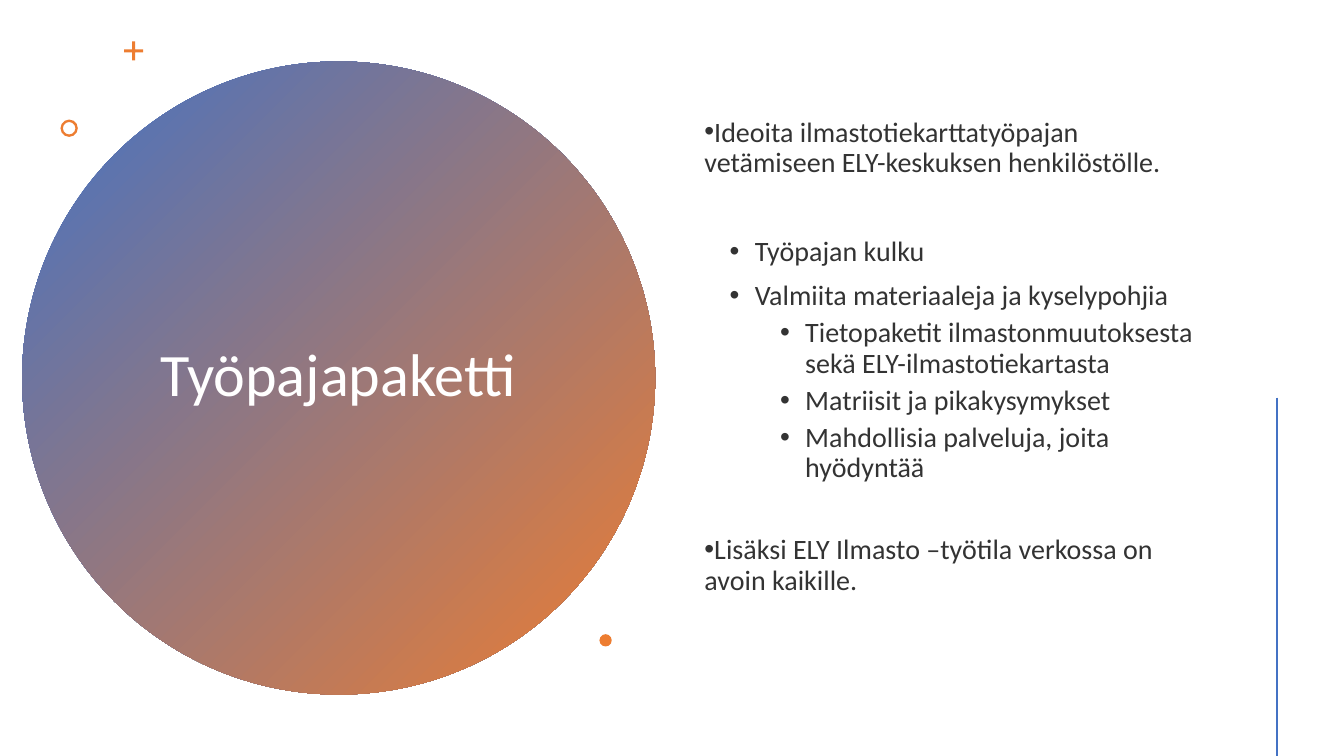
from dataclasses import dataclass

from lxml.etree import SubElement
from pptx import Presentation
from pptx.dml.color import RGBColor
from pptx.enum.shapes import MSO_CONNECTOR, MSO_SHAPE
from pptx.enum.text import MSO_ANCHOR, PP_ALIGN
from pptx.oxml.ns import qn
from pptx.util import Pt

COLORS = {"blue": "4472C4", "orange": "ED7D31", "white": "FFFFFF", "text": "333333"}
FONT = "Calibri"
HANGING = -18


@dataclass
class Accent:
    kind: MSO_SHAPE
    left: float
    top: float
    size: float
    adjustment: float | None = None


@dataclass
class Bullet:
    text: str
    margin: float
    space_before: float
    level: int = 0


ACCENTS = [
    Accent(MSO_SHAPE.CROSS, 88.6, 29.5, 13.7, 0.42),
    Accent(MSO_SHAPE.DONUT, 43.2, 85.4, 12.4, 0.14),
    Accent(MSO_SHAPE.OVAL, 428.2, 453, 8.8),
]

BULLETS = [
    Bullet("Ideoita ilmastotiekarttatyöpajan vetämiseen ELY-keskuksen henkilöstölle.", 0, 10),
    Bullet("Työpajan kulku", 36, 42),
    Bullet("Valmiita materiaaleja ja kyselypohjia", 36, 10),
    Bullet("Tietopaketit ilmastonmuutoksesta sekä ELY-ilmastotiekartasta", 72, 5, 1),
    Bullet("Matriisit ja pikakysymykset", 72, 5, 1),
    Bullet("Mahdollisia palveluja, joita hyödyntää", 72, 5, 1),
    Bullet("Lisäksi ELY Ilmasto –työtila verkossa on avoin kaikille.", 0, 37),
]


def color(name: str) -> RGBColor:
    return RGBColor.from_string(COLORS[name])


def apply_format(target, values: dict) -> None:
    for name, value in values.items():
        setattr(target, name, value)


def add_plain_shape(slide, kind: MSO_SHAPE, left: float, top: float, size: float):
    shape = slide.shapes.add_shape(kind, Pt(left), Pt(top), Pt(size), Pt(size))
    shape.shadow.inherit = False
    shape.line.fill.background()
    return shape


def add_circle(slide) -> None:
    circle = add_plain_shape(slide, MSO_SHAPE.OVAL, 15.8, 43.9, 452.2)
    circle.fill.gradient()
    circle.fill.gradient_angle = 315
    for stop, position, name in zip(circle.fill.gradient_stops, (0, 1), ("blue", "orange")):
        stop.position = position
        stop.color.rgb = color(name)


def add_accent(slide, accent: Accent) -> None:
    shape = add_plain_shape(slide, accent.kind, accent.left, accent.top, accent.size)
    shape.fill.solid()
    shape.fill.fore_color.rgb = color("orange")
    if accent.adjustment is not None:
        shape.adjustments[0] = accent.adjustment


def add_text_frame(slide, left: float, top: float, width: float, height: float):
    box = slide.shapes.add_textbox(Pt(left), Pt(top), Pt(width), Pt(height))
    apply_format(box.text_frame, {"word_wrap": True, "vertical_anchor": MSO_ANCHOR.MIDDLE})
    return box.text_frame


def write_text(paragraph, text: str, size: float, color_name: str, layout: dict) -> None:
    run = paragraph.add_run()
    run.text = text
    apply_format(run.font, {"name": FONT, "size": Pt(size)})
    run.font.color.rgb = color(color_name)
    apply_format(paragraph, {"line_spacing": 0.9, **layout})


def add_bullet(paragraph, bullet: Bullet) -> None:
    layout = {"level": bullet.level, "space_before": Pt(bullet.space_before)}
    write_text(paragraph, bullet.text, 20, "text", layout)
    properties = paragraph._p.get_or_add_pPr()
    properties.set("marL", str(Pt(bullet.margin)))
    properties.set("indent", str(Pt(HANGING)))
    SubElement(properties, qn("a:buFont")).set("typeface", "Arial")
    SubElement(properties, qn("a:buChar")).set("char", "•")


def add_side_line(slide) -> None:
    line = slide.shapes.add_connector(
        MSO_CONNECTOR.STRAIGHT, Pt(912.2), Pt(284), Pt(912.2), Pt(540)
    )
    line.line.color.rgb = color("blue")
    line.line.width = Pt(2)
    SubElement(line._element.spPr, qn("a:effectLst"))


def main() -> None:
    presentation = Presentation()
    apply_format(presentation, {"slide_width": Pt(960), "slide_height": Pt(540)})
    slide = presentation.slides.add_slide(presentation.slide_layouts[6])

    # Gradient circle with the title
    add_circle(slide)
    title = add_text_frame(slide, 97.9, 101.5, 287.3, 336.2)
    write_text(title.paragraphs[0], "Työpajapaketti", 43, "white", {"alignment": PP_ALIGN.CENTER})

    # Small accents around the circle
    for accent in ACCENTS:
        add_accent(slide, accent)

    # Bulleted body
    body = add_text_frame(slide, 496.1, 41, 375.8, 428)
    for index, bullet in enumerate(BULLETS):
        add_bullet(body.add_paragraph() if index else body.paragraphs[0], bullet)

    # Vertical line on the right
    add_side_line(slide)

    presentation.save("out.pptx")


if __name__ == "__main__":
    main()
